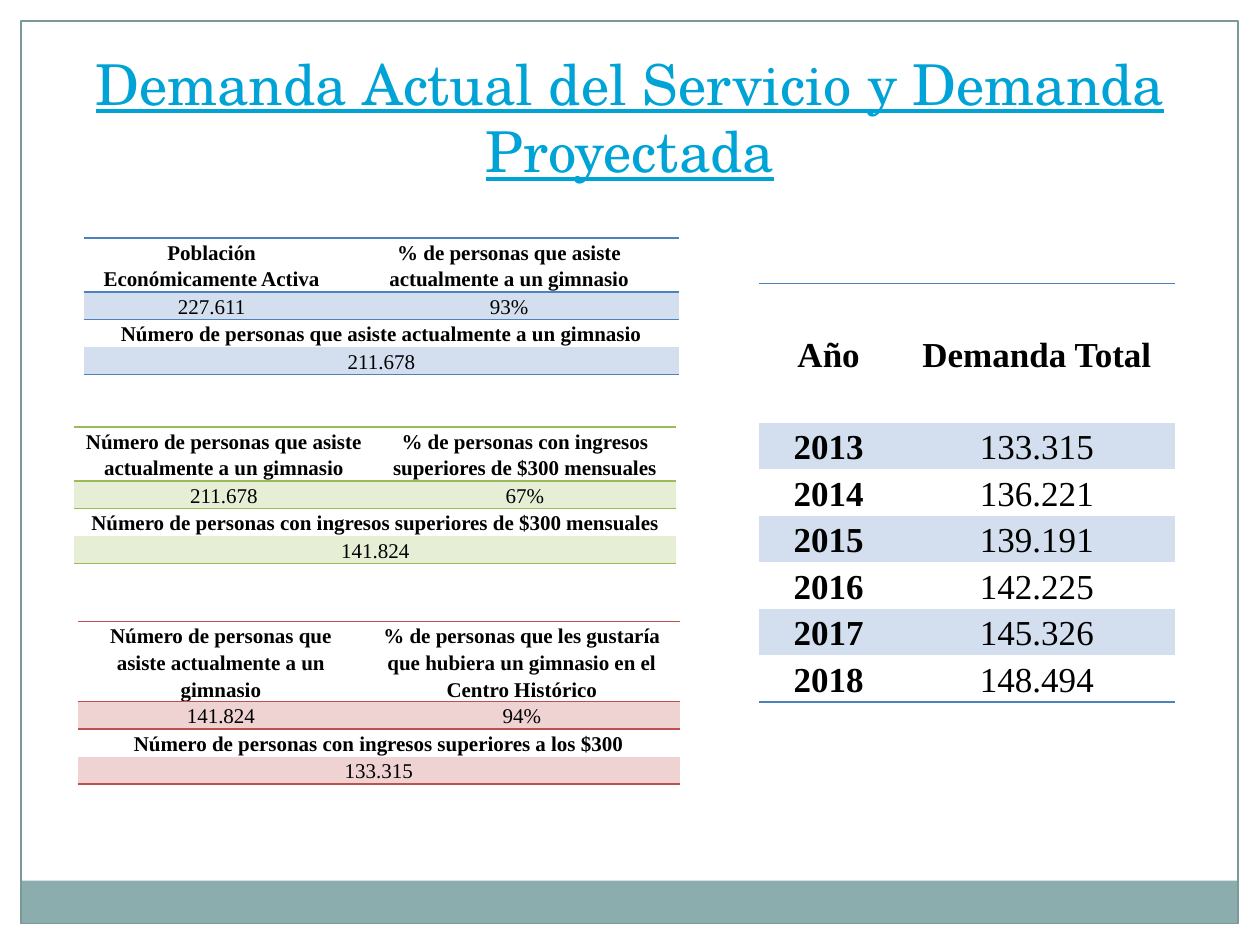
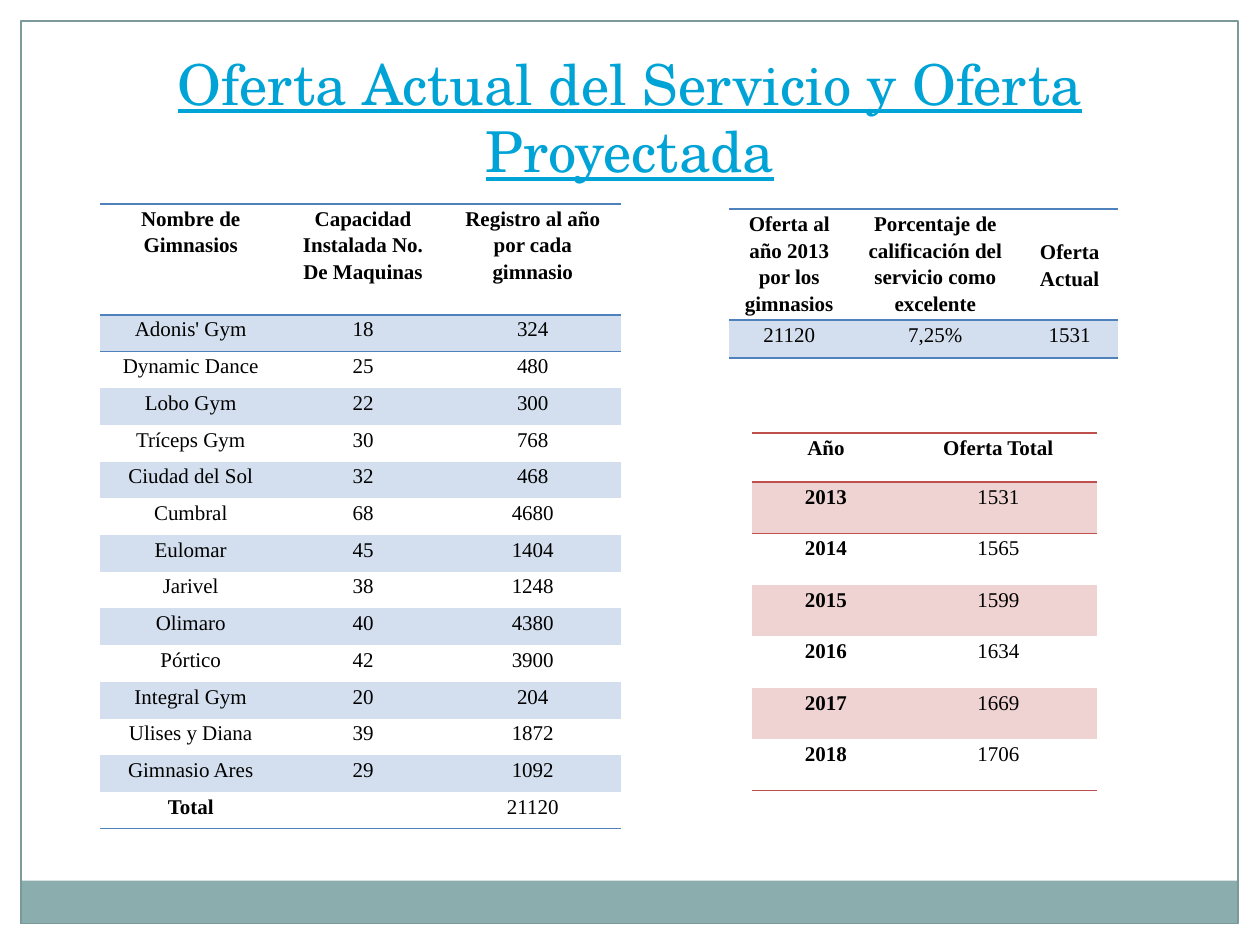
from dataclasses import dataclass

from lxml import etree
from pptx import Presentation
from pptx.dml.color import RGBColor
from pptx.enum.shapes import MSO_SHAPE
from pptx.enum.text import MSO_ANCHOR, PP_ALIGN
from pptx.oxml.ns import qn
from pptx.util import Pt

RECT = MSO_SHAPE.RECTANGLE
TOP, MIDDLE = MSO_ANCHOR.TOP, MSO_ANCHOR.MIDDLE
CENTER = PP_ALIGN.CENTER
PLAIN = "{2D5ABB26-0587-4C30-8999-92F81FD0307C}"  # no style, no grid


@dataclass(frozen=True)
class Theme:
    title: str = "00A3D6"
    ink: str = "000000"
    band: str = "8CADAE"
    frame: str = "7C999A"
    # each pair: rule colour, row colour
    blue: tuple = ("4F81BD", "D3DFEE")
    green: tuple = ("9BBB59", "E6EED5")
    red: tuple = ("C0504D", "EFD3D2")
    head: str = "TeX Gyre Schola"
    body: str = "Times New Roman"
    big: float = 32.2
    mid: float = 20
    small: float = 12


T = Theme()


def write(box, text, size=T.small, font=T.body, color=T.ink, bold=False,
          line=False, space=1.15):
    para = box.paragraphs[0]
    para.alignment = CENTER
    para.line_spacing = space
    if not text:
        para._p.get_or_add_endParaRPr().set("sz", str(int(size * 100)))
        return
    run = para.add_run()
    run.text = text
    run.font.size = Pt(size)
    run.font.name = font
    run.font.bold = bold
    run.font.underline = line
    run.font.color.rgb = RGBColor.from_string(color)


def grid(slide, left, top, cols, high, rows, tint, bold=(), size=T.small,
         mid=(), rule=True):
    """Add a banded table; high is (head, row), a one-item row spans all columns."""
    last = len(rows) - 1
    tall = [high[0]] + [high[1]] * last
    table = slide.shapes.add_table(len(rows), len(cols), Pt(left), Pt(top),
                                   Pt(sum(cols)), Pt(sum(tall))).table
    table.first_row = table.horz_banding = False
    table._tbl.tblPr.find(qn("a:tableStyleId")).text = PLAIN
    for col, width in zip(table.columns, cols):
        col.width = Pt(width)
    edges = {"a:lnT": {0, 1} if rule else {0},
             "a:lnB": {0, last} if rule else {last}}
    for r, row in enumerate(rows):
        table.rows[r].height = Pt(tall[r])
        for c in range(len(cols)):
            cell = table.cell(r, c)
            cell.margin_left = cell.margin_right = Pt(5)
            cell.margin_top = cell.margin_bottom = 0
            cell.vertical_anchor = MIDDLE if (r, c) in mid else TOP
            for tag, lines in edges.items():
                if r in lines:
                    edge = etree.SubElement(cell._tc.get_or_add_tcPr(), qn(tag), w="12700")
                    fill = etree.SubElement(edge, qn("a:solidFill"))
                    etree.SubElement(fill, qn("a:srgbClr"), val=tint[0])
            if r % 2:
                cell.fill.solid()
                cell.fill.fore_color.rgb = RGBColor.from_string(tint[1])
            else:
                cell.fill.background()
            if c < len(row):
                write(cell.text_frame, row[c], size=size,
                      bold=r == 0 or (r, c) in bold)
        if len(row) < len(cols):
            table.cell(r, 0).merge(table.cell(r, len(cols) - 1))


deck = Presentation()
deck.slide_width, deck.slide_height = Pt(720), Pt(540)

# Shared band, frame and title
pages = []
for name in ("Demanda Actual del Servicio y Demanda Proyectada",
             "Oferta Actual del Servicio y Oferta Proyectada"):
    page = deck.slides.add_slide(deck.slide_layouts[5])
    band = page.shapes.add_shape(RECT, Pt(11.5), Pt(503.3), Pt(695.5), Pt(24.5))
    band.fill.solid()
    band.fill.fore_color.rgb = RGBColor.from_string(T.band)
    band.line.fill.background()
    frame = page.shapes.add_shape(RECT, Pt(12), Pt(12), Pt(695.5), Pt(515.8))
    frame.fill.background()
    frame.line.color.rgb = RGBColor.from_string(T.frame)
    frame.line.width = Pt(0.75)
    band.shadow.inherit = frame.shadow.inherit = False
    title = page.shapes.title
    title.left, title.top, title.width, title.height = Pt(36), Pt(21.6), Pt(648), Pt(90)
    title.text_frame.vertical_anchor = MIDDLE
    write(title.text_frame, name, size=T.big, font=T.head, color=T.title,
          line=True, space=1.0)
    pages.append(page)
demand, supply = pages

# Demand: three steps from population to customers
steps = [
    (48, 136, (146, 194), 31, T.blue, [
        ("Población Económicamente Activa",
         "% de personas que asiste actualmente a un gimnasio"),
        ("227.611", "93%"),
        ("Número de personas que asiste actualmente a un gimnasio",),
        ("211.678",)]),
    (42.5, 244, (171, 173), 31, T.green, [
        ("Número de personas que asiste actualmente a un gimnasio",
         "% de personas con ingresos superiores de $300 mensuales"),
        ("211.678", "67%"),
        ("Número de personas con ingresos superiores de $300 mensuales",),
        ("141.824",)]),
    (44.5, 355, (163.5, 180.5), 46, T.red, [
        ("Número de personas que asiste actualmente a un gimnasio",
         "% de personas que les gustaría que hubiera un gimnasio en el Centro Histórico"),
        ("141.824", "94%"),
        ("Número de personas con ingresos superiores a los $300",),
        ("133.315",)]),
]
for left, top, cols, head, tint, rows in steps:
    grid(demand, left, top, cols, (head, 15.7), rows, tint, bold={(2, 0)})

# Yearly forecasts
years = [str(year) for year in range(2013, 2019)]
first = {(r, 0) for r in range(1, len(years) + 1)}
totals = ["133.315", "136.221", "139.191", "142.225", "145.326", "148.494"]
grid(demand, 433.5, 162, (80, 158), (79.5, 26.6),
     [("Año", "Demanda Total"), *zip(years, totals)], T.blue, bold=first,
     size=T.mid, mid={(0, 0), (0, 1)}, rule=False)

# Supply: gyms, current offer, forecast
gyms = [
    ("Nombre de Gimnasios", "Capacidad Instalada No. De Maquinas",
     "Registro al año por cada gimnasio"),
    ("Adonis' Gym", "18", "324"),
    ("Dynamic Dance", "25", "480"),
    ("Lobo Gym", "22", "300"),
    ("Tríceps Gym", "30", "768"),
    ("Ciudad del Sol", "32", "468"),
    ("Cumbral", "68", "4680"),
    ("Eulomar", "45", "1404"),
    ("Jarivel", "38", "1248"),
    ("Olimaro", "40", "4380"),
    ("Pórtico", "42", "3900"),
    ("Integral Gym", "20", "204"),
    ("Ulises y Diana", "39", "1872"),
    ("Gimnasio Ares", "29", "1092"),
    ("Total", "", "21120"),
]
grid(supply, 57, 116.5, (104, 93, 101), (63.4, 21), gyms, T.blue, bold={(14, 0)})
grid(supply, 416.5, 119.5, (69, 98, 55.5), (63.4, 21.7), [
    ("Oferta al año 2013 por los gimnasios",
     "Porcentaje de calificación del servicio como excelente", "Oferta Actual"),
    ("21120", "7,25%", "1531")], T.blue, mid={(0, 2)})
offers = ["1531", "1565", "1599", "1634", "1669", "1706"]
grid(supply, 430, 247.5, (84, 113), (28, 29.4),
     [("Año", "Oferta Total"), *zip(years, offers)], T.red, bold=first)

deck.save("out.pptx")
